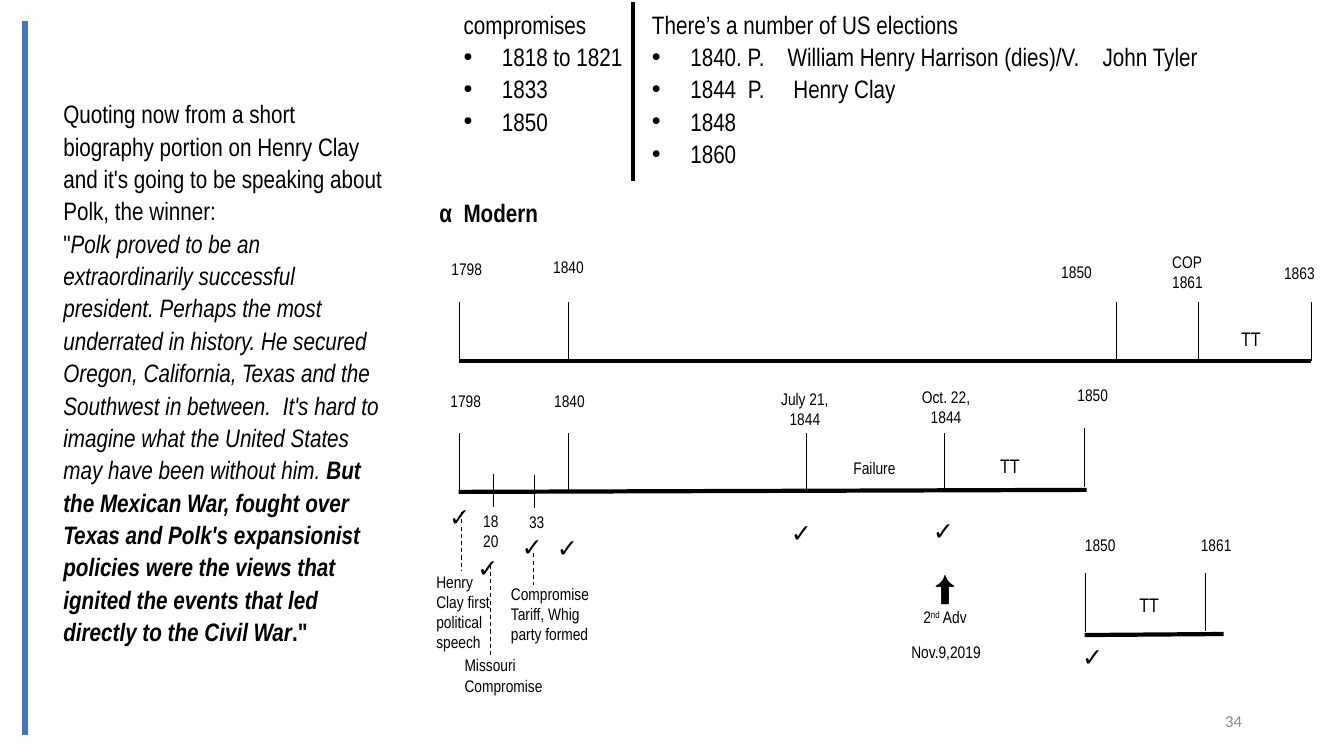
import dataclasses

import pptx
import pptx.dml.color
import pptx.enum.dml
import pptx.enum.shapes
import pptx.enum.text
import pptx.oxml.ns
import pptx.util
from lxml import etree

CENTER = pptx.enum.text.PP_ALIGN.CENTER
LEFT = pptx.enum.text.PP_ALIGN.LEFT
RIGHT = pptx.enum.text.PP_ALIGN.RIGHT


@dataclasses.dataclass(frozen=True)
class Theme:
    """Colours, fonts, type sizes, line weights and grid cell of the slide."""
    ink: str = "000000"
    accent: str = "4472C4"
    muted: str = "8C8C8C"
    font: str = "Arial Narrow"
    number_font: str = "Calibri"
    body: float = 18
    period: float = 14
    label: float = 12
    arrow: float = 24
    hairline: float = 0.75
    divider: float = 2.25
    axis: float = 3
    sidebar: float = 4.5
    leading: float = 1.07
    indent: float = 0.38
    space: float = 4.1
    cell: float = 0.1


THEME = Theme()


@dataclasses.dataclass(frozen=True)
class Box:
    """A region measured in grid columns and rows."""
    left: float
    top: float
    width: float
    height: float

    def point(self, column, row):
        """Return slide lengths for a point relative to the region."""
        return cells(self.left + column), cells(self.top + row)


def cells(count):
    """Convert a count of grid cells to a slide length."""
    return pptx.util.Inches(count * THEME.cell)


def gap(spaces):
    """Return one space widened to the given number of spaces."""
    return " ", {"spc": round((spaces - 1) * THEME.space * 100)}


def add_line(slide, start, end, weight, color=THEME.ink, dash=None):
    """Draw a plain straight line between two points."""
    line = slide.shapes.add_connector(pptx.enum.shapes.MSO_CONNECTOR.STRAIGHT, *start, *end)
    line.line.color.rgb = pptx.dml.color.RGBColor.from_string(color)
    for name, value in {"width": pptx.util.Pt(weight), "dash_style": dash}.items():
        setattr(line.line, name, value)
    etree.SubElement(line._element.spPr, pptx.oxml.ns.qn("a:effectLst"))


def add_run(paragraph, text, size, style, color, font):
    """Add a run, taking font attributes and raw run properties from its style."""
    run = paragraph.add_run()
    run.text = text
    run.font.color.rgb = pptx.dml.color.RGBColor.from_string(color)
    formats = {"name": font, "size": pptx.util.Pt(size), **style}
    for name, value in formats.items():
        if name in ("spc", "baseline"):
            run._r.get_or_add_rPr().set(name, str(value))
        else:
            setattr(run.font, name, value)


def add_bullet(paragraph):
    """Give a paragraph a round bullet with a hanging indent."""
    properties = paragraph._p.get_or_add_pPr()
    indent = pptx.util.Inches(THEME.indent)
    properties.set("marL", str(indent))
    properties.set("indent", str(-indent))
    for tag, name, value in (("a:buFont", "typeface", "Arial"), ("a:buChar", "char", "•")):
        etree.SubElement(properties, pptx.oxml.ns.qn(tag)).set(name, value)


def add_text(slide, box, column, row, width, paragraphs, size=THEME.label, align=LEFT,
             style=None, leading=1.0, lines=None, bullets=False,
             color=THEME.ink, font=THEME.font):
    """Place a growing text box relative to a region."""
    if isinstance(paragraphs, str):
        paragraphs = paragraphs.split("\n")
    height = (lines or len(paragraphs)) * size * 1.17 * leading / 72 + 0.1
    shape = slide.shapes.add_textbox(*box.point(column, row), cells(width),
                                     pptx.util.Inches(height))
    frame = shape.text_frame
    frame.word_wrap = True
    frame.auto_size = pptx.enum.text.MSO_AUTO_SIZE.SHAPE_TO_FIT_TEXT
    for index, runs in enumerate(paragraphs):
        paragraph = frame.add_paragraph() if index else frame.paragraphs[0]
        for name, value in {"alignment": align, "line_spacing": leading}.items():
            setattr(paragraph, name, value)
        if bullets and index:
            add_bullet(paragraph)
        for text, run_style in [(runs, {})] if isinstance(runs, str) else runs:
            add_run(paragraph, text, size, {**(style or {}), **run_style}, color, font)


def add_quotation(slide, box):
    """Build the biography quotation beside its coloured bar."""
    italic = {"italic": True}
    paragraphs = [
        "Quoting now from a short biography portion on Henry Clay and it's going to be "
        "speaking about Polk, the winner:",
        [('"', {}),
         ("Polk proved to be an extraordinarily successful president. Perhaps the most "
          "underrated in history. He secured Oregon, California, Texas and the Southwest "
          "in between.", italic),
         (gap(2)[0], {**italic, **gap(2)[1]}),
         ("It's hard to imagine what the United States may have been without him. ", italic),
         ("But the Mexican War, fought over Texas and Polk's expansionist policies were the "
          "views that ignited the events that led directly to the Civil War",
          {"italic": True, "bold": True}),
         ('."', {"bold": True})]]
    add_line(slide, box.point(0, 0), box.point(0, box.height), THEME.sidebar, THEME.accent)
    add_text(slide, box, 2.8, 7, 33.9, paragraphs, THEME.body, leading=THEME.leading, lines=17)


def add_date_lists(slide, box):
    """Build the two bulleted date lists and the divider between them."""
    compromises = ["compromises", "1818 to 1821", "1833", "1850"]
    elections = [
        "There’s a number of US elections",
        [("1840. P.", {}), gap(4), ("William Henry Harrison (dies)/V.", {}), gap(4),
         ("John Tyler", {})],
        [("1844", {}), gap(2), ("P.", {}), gap(5), ("Henry Clay", {})],
        "1848", "1860"]
    for column, width, paragraphs in ((0, 22.5, compromises), (18.7, 66.7, elections)):
        add_text(slide, box, column, 0, width, paragraphs, THEME.body,
                 leading=THEME.leading, bullets=True)
    add_line(slide, box.point(17.8, 0), box.point(17.8, box.height), THEME.divider)


def add_timeline(slide, box, rise, ticks, labels, periods):
    """Build an axis on the region's bottom edge with ticks, dates and periods."""
    add_line(slide, box.point(0, box.height), box.point(box.width, box.height - rise), THEME.axis)
    for column, top, bottom in ticks:
        add_line(slide, box.point(column, top), box.point(column, bottom), THEME.hairline)
    for text, column, row, width, align in labels:
        add_text(slide, box, column, row, width, text, align=align)
    for column, row in periods:
        add_text(slide, box, column, row, 6.4, "TT", THEME.period, CENTER)


def add_events(slide, box):
    """Build the check marks, dashed leaders and event notes under the timelines."""
    checks = ((1.2, 0), (4, 5.1), (8.4, 3), (11.9, 3.1), (35.1, 1.6), (49.2, 1.4), (64, 13.9))
    for column, row in checks:
        add_text(slide, box, column, row, 4.2, "✓", THEME.body, CENTER, {"bold": True})
    notes = (
        ("Henry Clay first political speech", 0, 7, 8.4, 4),
        ("Missouri\nCompromise", 2.8, 15.3, 10.9, 2),
        ("Compromise\nTariff, Whig party formed", 7.4, 8.2, 10.9, 3))
    for text, column, row, width, lines in notes:
        add_text(slide, box, column, row, width, text, lines=lines)
    for column, top, bottom in ((3.5, 1.6, 7.4), (6.4, 6.8, 16), (10.6, 5.7, 8.8)):
        add_line(slide, box.point(column, top), box.point(column, bottom), THEME.hairline,
                 dash=pptx.enum.dml.MSO_LINE.DASH)
    advent = [[("⬆", {"size": pptx.util.Pt(THEME.arrow)})],
              [("2", {}), ("nd", {"baseline": 30000}), (" Adv", {})]]
    add_text(slide, box, 47.4, 6.5, 8.1, advent, align=CENTER, lines=3)
    add_text(slide, box, 46.8, 14, 9.5, "Nov.9,2019", align=CENTER)
    add_text(slide, box, 40.4, -4.3, 8.1, "Failure", align=CENTER)


def add_heading_and_number(slide, box):
    """Place the timeline heading and the page number within the slide."""
    heading = [[("α", {}), gap(2), ("Modern", {})]]
    add_text(slide, box, 42.6, 19.1, 18.1, heading, THEME.body, style={"bold": True})
    add_text(slide, box, 94.2, 70, 30, "34", align=RIGHT,
             color=THEME.muted, font=THEME.number_font)


def main():
    """Build and save the slide."""
    presentation = pptx.Presentation()
    presentation.slide_width, presentation.slide_height = cells(133.33), cells(75)
    slide = presentation.slides.add_slide(presentation.slide_layouts[6])
    add_heading_and_number(slide, Box(0, 0, 133.33, 75))
    add_quotation(slide, Box(2.5, 2.1, 36.7, 70.8))
    add_date_lists(slide, Box(45, 0.2, 85.4, 17.8))
    add_timeline(
        slide, Box(45.5, 30, 84.6, 5.8), 0,
        [(column, 0, 5.8) for column in (0.1, 10.9, 65.3, 73.4, 84.6)],
        [("1798", -1.7, -4.8, 6.7, LEFT), ("1840", 7.7, -5, 6.4, CENTER),
         ("1850", 58.8, -4.5, 6.4, LEFT), ("COP\n1861", 69.8, -5.5, 6.4, LEFT),
         ("1863", 80.9, -4.4, 6.2, LEFT)],
        [(75.4, 1.9)])
    add_timeline(
        slide, Box(45.5, 43, 62.3, 5.8), 0.2,
        [(column, 0, 5.8) for column in (0.1, 10.9, 34.5, 48.2)]
        + [(62.1, -0.5, 5.3), (3.5, 4, 7.3), (7.5, 4.1, 7.4)],
        [("1798", -2.1, -4.7, 5.6, CENTER), ("1840", 7.8, -4.7, 6.4, CENTER),
         ("July 21,\n1844", 30.3, -4.9, 8.1, CENTER),
         ("Oct. 22,\n1844", 43.6, -5.1, 9.5, CENTER),
         ("1850", 59.7, -5.3, 6.4, CENTER), ("18\n20", 0.5, 7.2, 5.4, CENTER),
         ("33", 5.1, 7.3, 5.3, CENTER)],
        [(51.5, 1.5)])
    add_timeline(
        slide, Box(107.6, 56.8, 13.8, 6.2), 0.1, [(0.1, 0, 5.9), (12, 0, 5.8)],
        [("1850", -2.8, -4.2, 8.7, CENTER), ("1861", 9.7, -4.2, 6.7, CENTER)],
        [(3.2, 1.5)])
    add_events(slide, Box(42.3, 49.2, 68.2, 20.3))
    presentation.save("out.pptx")


if __name__ == "__main__":
    main()
